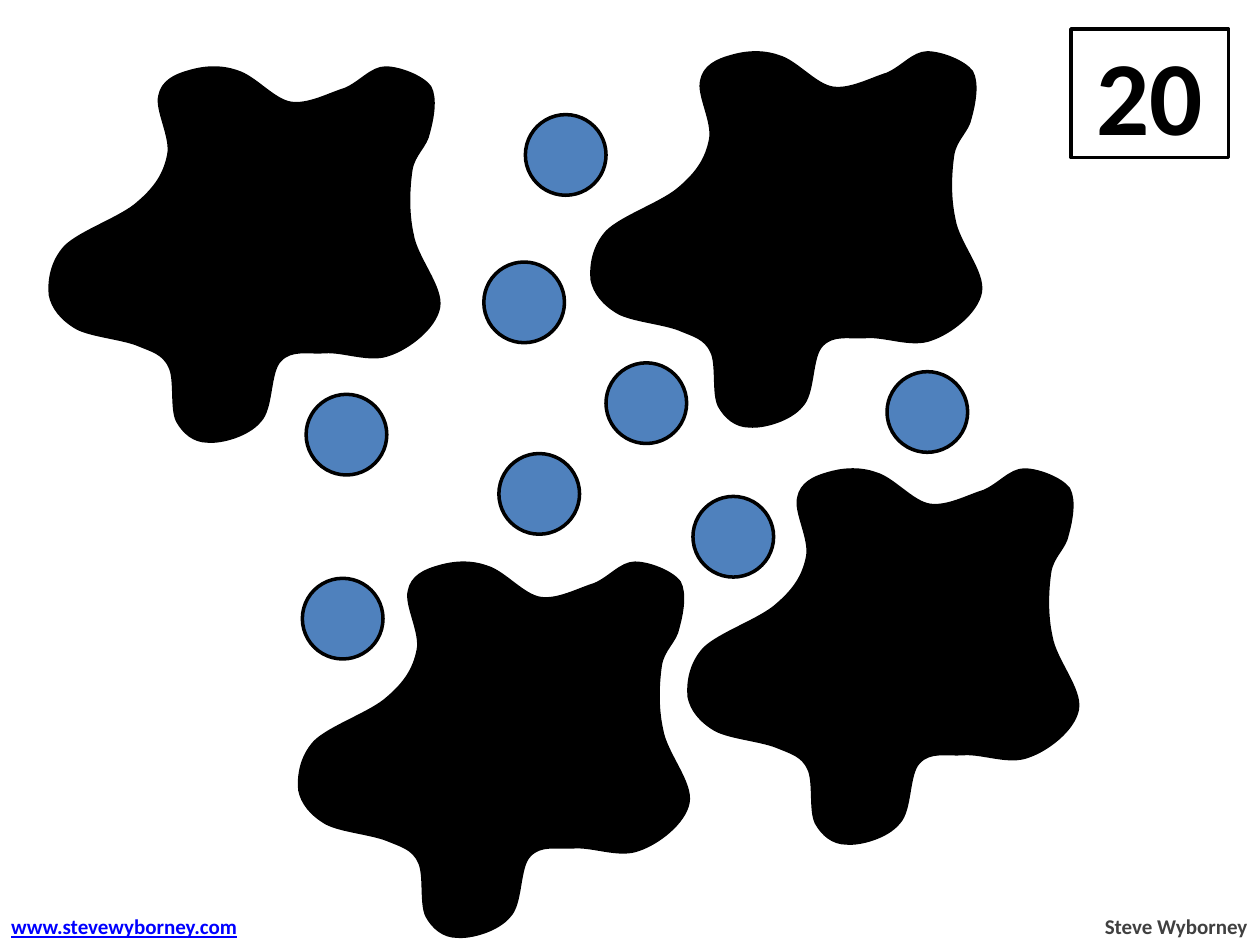
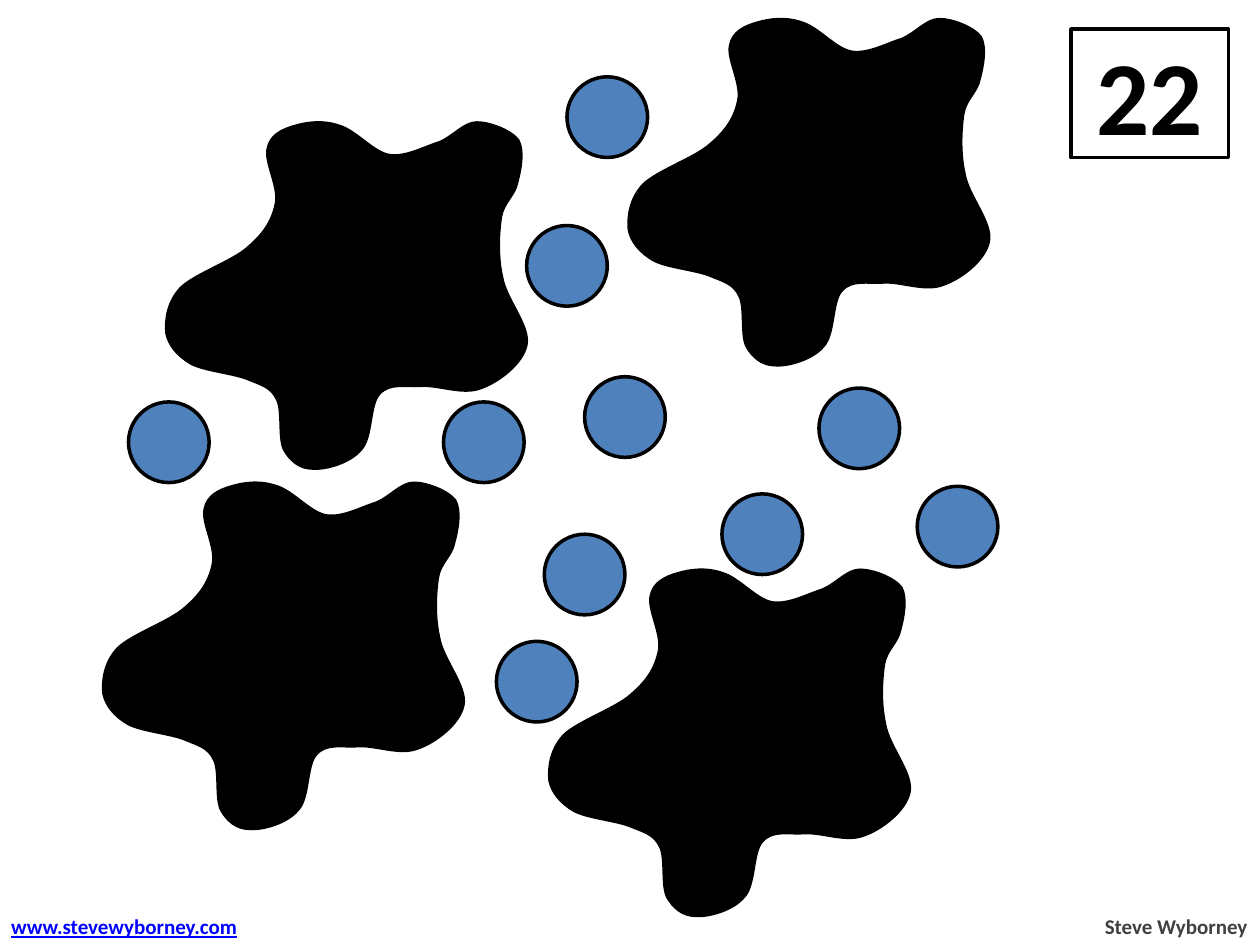
from lxml import etree
from pptx import Presentation
from pptx.dml.color import RGBColor
from pptx.enum.shapes import MSO_SHAPE
from pptx.enum.text import MSO_ANCHOR, PP_ALIGN
from pptx.oxml.ns import qn
from pptx.util import Inches, Pt

OVAL, RECT = MSO_SHAPE.OVAL, MSO_SHAPE.RECTANGLE
LEFT, MID, RIGHT = PP_ALIGN.LEFT, PP_ALIGN.CENTER, PP_ALIGN.RIGHT
BLACK, WHITE, BLUE, GRAY, LINK = "000000", "FFFFFF", "4F81BD", "404040", "0000FF"
DOT = 0.64
DEPTH = 2.96  # height of the blot as it stands after its quarter turn

# Ink blot: start point, then Bezier curves (two controls and an end), in inches
START = (0.21, 2.06)
CURVES = [
    (0.09, 1.99, 0.02, 1.90, 0.00, 1.80),
    (-0.01, 1.69, 0.01, 1.54, 0.12, 1.42),
    (0.24, 1.30, 0.57, 1.19, 0.70, 1.07),
    (0.84, 0.95, 0.91, 0.84, 0.94, 0.69),
    (0.97, 0.55, 0.84, 0.33, 0.87, 0.22),
    (0.89, 0.11, 0.99, 0.06, 1.10, 0.03),
    (1.20, 0.00, 1.34, -0.02, 1.48, 0.03),
    (1.62, 0.07, 1.77, 0.26, 1.91, 0.28),
    (2.05, 0.30, 2.21, 0.21, 2.34, 0.17),
    (2.46, 0.12, 2.55, 0.00, 2.66, 0.00),
    (2.77, 0.00, 2.95, 0.07, 3.01, 0.15),
    (3.06, 0.24, 3.03, 0.40, 3.00, 0.51),
    (2.98, 0.62, 2.88, 0.68, 2.86, 0.81),
    (2.84, 0.95, 2.83, 1.14, 2.87, 1.32),
    (2.90, 1.51, 3.11, 1.74, 3.08, 1.90),
    (3.05, 2.06, 2.84, 2.22, 2.69, 2.27),
    (2.54, 2.33, 2.33, 2.24, 2.18, 2.25),
    (2.04, 2.26, 1.91, 2.22, 1.82, 2.32),
    (1.73, 2.41, 1.76, 2.70, 1.66, 2.80),
    (1.57, 2.91, 1.36, 2.97, 1.25, 2.96),
    (1.14, 2.96, 1.06, 2.89, 1.01, 2.80),
    (0.96, 2.70, 1.00, 2.47, 0.95, 2.37),
    (0.90, 2.26, 0.81, 2.24, 0.69, 2.19),
    (0.56, 2.14, 0.32, 2.12, 0.21, 2.06),
]

# Each slide: total, dots (left, top), blot scale, blots (left, top before turning)
SLIDES = [
    ("20",
     [(4.17, 0.91), (0.84, 1.82), (4.28, 4.85), (1.43, 2.74), (2.43, 3.13),
      (2.56, 5.86), (2.56, 1.91), (4.64, 5.94), (5.5, 3.94), (3.84, 2.08),
      (6.46, 5.53), (3.96, 3.6), (4.81, 2.88), (5.76, 2.44), (7.04, 2.95),
      (2.4, 4.59), (6.81, 4.63), (7.59, 4.1), (5.29, 1.55), (6.4, 1.39)],
     1, [(4.76, 0.36), (5.53, 3.67), (2.44, 4.41), (0.46, 0.48)]),
    ("22",
     [(2.32, 1.3), (1.02, 3.19), (2.76, 4.99), (3.52, 3.19), (2.25, 2.97),
      (6.27, 5.73), (4.18, 1.79), (4.82, 5.85), (1.9, 4.1), (6.5, 3.08),
      (5.82, 1.01), (5.44, 4.97), (3.94, 5.09), (4.64, 2.99), (6.94, 1.52),
      (3.23, 1.94), (4.32, 4.24), (5.73, 3.92), (5.95, 1.97), (7.28, 3.86),
      (4.5, 0.61), (1.04, 5.01)],
     2.85 / 3.08, [(5.05, 0.1), (4.42, 4.47), (0.88, 3.78), (1.38, 0.92)]),
]
FOOTERS = [
    ("Steve Wyborney", 8.66, 1.34, RIGHT, GRAY, False),
    ("www.stevewyborney.com", -0.01, 2.05, LEFT, LINK, True),
]


def paint(shape, fill):
    shape.shadow.inherit = False
    shape.fill.solid()
    shape.fill.fore_color.rgb = RGBColor.from_string(fill)
    shape.line.color.rgb = RGBColor.from_string(BLACK)
    shape.line.width = Pt(2)


def write(shape, text, size, color, align, under=False):
    para = shape.text_frame.paragraphs[0]
    para.text = text
    para.alignment = align
    font = para.runs[0].font
    font.name, font.size, font.bold, font.underline = "Calibri", Pt(size), True, under
    font.color.rgb = RGBColor.from_string(color)


deck = Presentation()
deck.slide_width, deck.slide_height = Inches(10), Inches(7.5)

for total, dots, scale, blots in SLIDES:
    slide = deck.slides.add_slide(deck.slide_layouts[6])
    shapes = slide.shapes

    # Dots
    for x, y in dots:
        dot = shapes.add_shape(OVAL, Inches(x), Inches(y), Inches(DOT), Inches(DOT))
        paint(dot, BLUE)

    # Blot points, laid on their side: start, then control, control, end
    flat = [START] + [c[i:i + 2] for c in CURVES for i in (0, 2, 4)]
    points = [(Inches((DEPTH - y) * scale), Inches(x * scale)) for x, y in flat]

    # Ink blots: join the curve ends, bend each side, then turn
    for left, top in blots:
        pen = shapes.build_freeform(*points[0])
        pen.add_line_segments(points[3::3], close=True)
        blot = pen.convert_to_shape(Inches(left), Inches(top))
        sides = blot._element.findall(".//" + qn("a:lnTo"))
        for n, side in enumerate(sides[:len(CURVES)]):
            side.tag = qn("a:cubicBezTo")
            for k in (0, 1):
                x, y = points[3 * n + 1 + k]
                side.insert(k, etree.Element(qn("a:pt"), x=str(x), y=str(y)))
        blot.rotation = 270
        paint(blot, BLACK)

    # Total box
    box = shapes.add_shape(RECT, Inches(8.5), Inches(0.23), Inches(1.25), Inches(1.02))
    paint(box, WHITE)
    box.text_frame.vertical_anchor = MSO_ANCHOR.MIDDLE
    write(box, total, 60, BLACK, MID)

    # Footers
    for text, left, width, align, color, under in FOOTERS:
        foot = shapes.add_textbox(Inches(left), Inches(7.2), Inches(width), Inches(0.3))
        foot.text_frame.word_wrap = False
        write(foot, text, 12, color, align, under)

deck.save("out.pptx")
